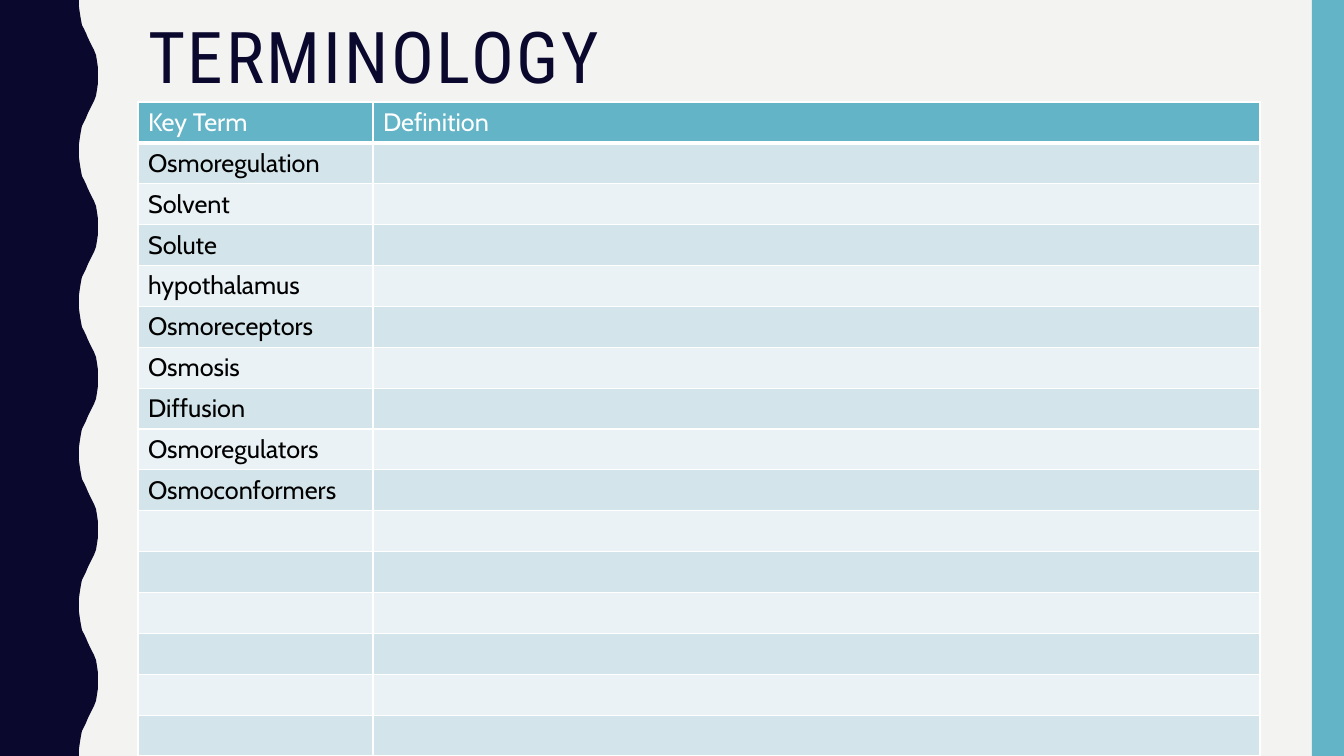
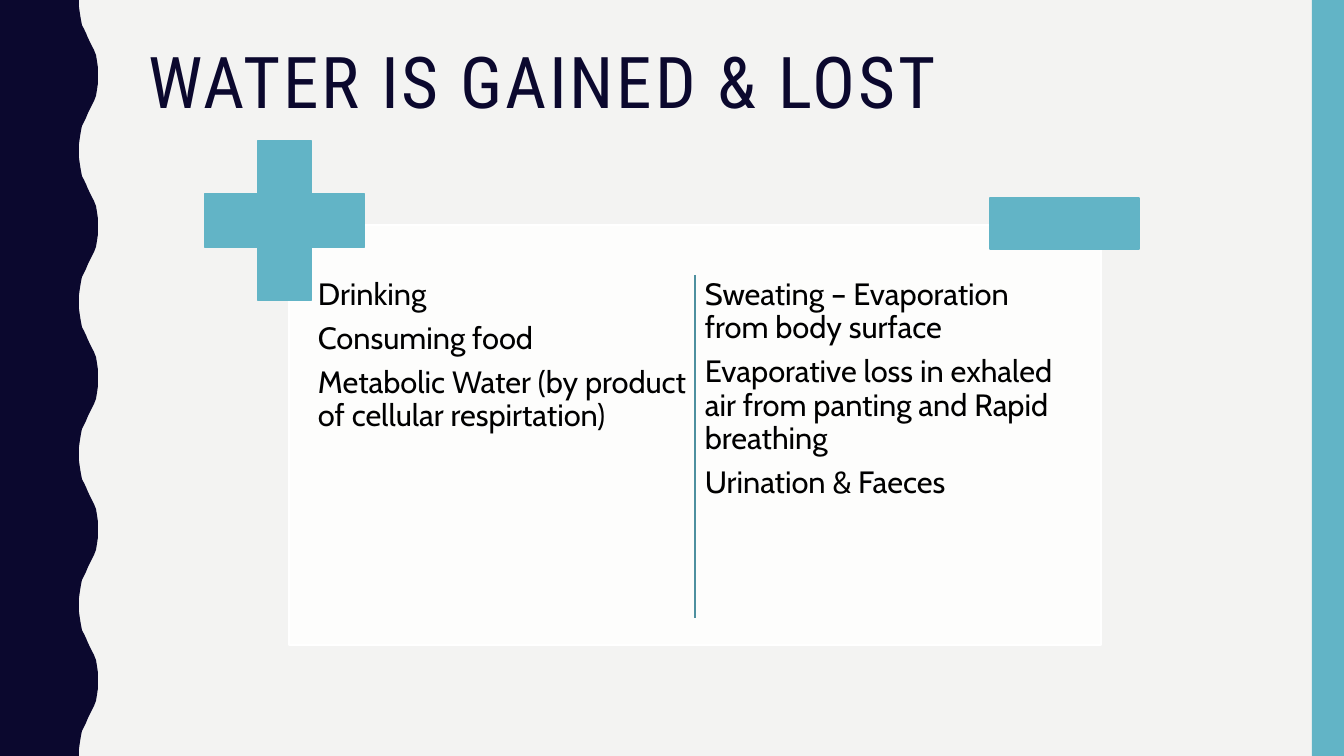
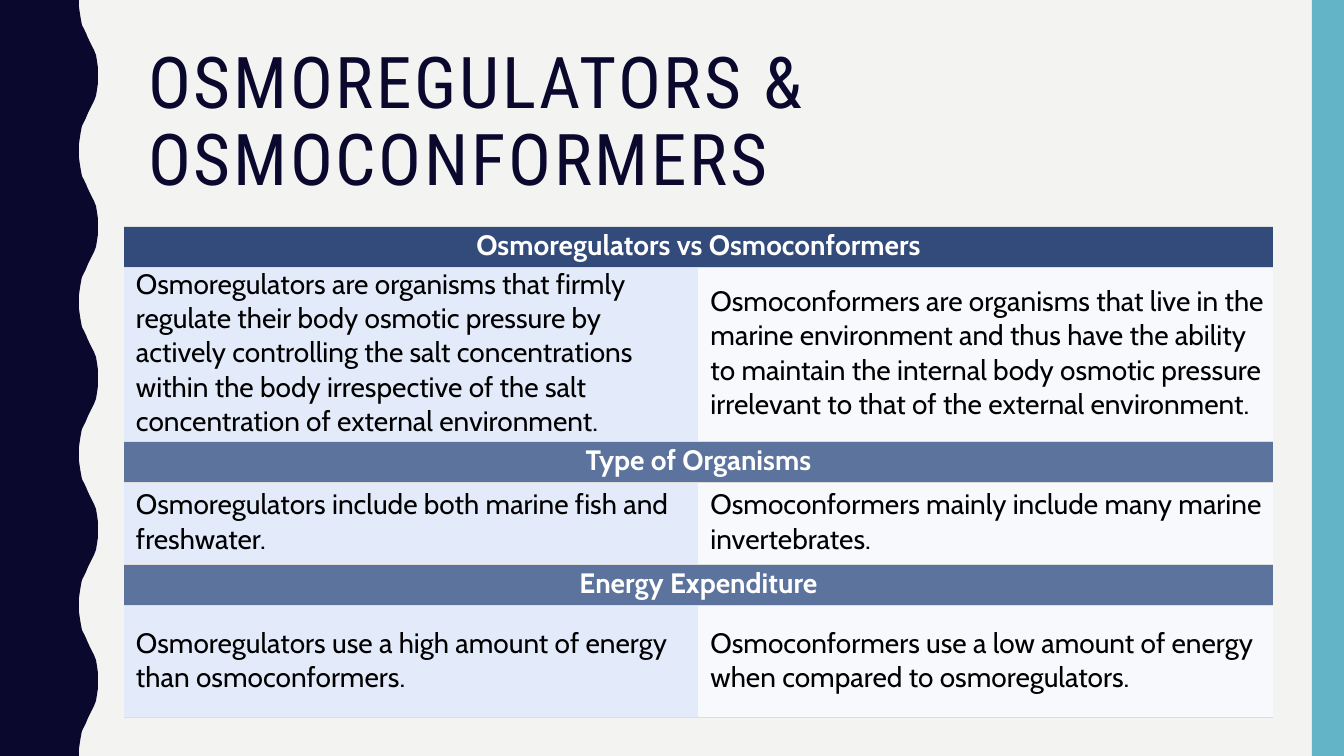
from lxml import etree
from pptx import Presentation
from pptx.dml.color import RGBColor
from pptx.enum.shapes import MSO_CONNECTOR, MSO_SHAPE
from pptx.enum.text import MSO_ANCHOR, MSO_AUTO_SIZE, PP_ALIGN
from pptx.oxml.ns import qn
from pptx.util import Pt

SLIDE_WIDTH, SLIDE_HEIGHT = 1344, 756
EMU_PER_PX = 12192000 / SLIDE_WIDTH
TITLE_ONLY = 5
RECTANGLE, CROSS = MSO_SHAPE.RECTANGLE, MSO_SHAPE.CROSS
STRAIGHT = MSO_CONNECTOR.STRAIGHT
LEFT, CENTER = PP_ALIGN.LEFT, PP_ALIGN.CENTER
TOP, MIDDLE = MSO_ANCHOR.TOP, MSO_ANCHOR.MIDDLE
NO_AUTOFIT = MSO_AUTO_SIZE.NONE
PLAIN_TABLE_STYLE = "{2D5ABB26-0587-4C30-8999-92F81FD0307C}"

TITLE_FONT, BODY_FONT = "Roboto Condensed", "Cabin"
COLORS = {
    "background": "F3F3F2", "navy": "0B082E", "teal": "62B4C6",
    "divider": "4E909F", "panel": "FDFDFC", "white": "FFFFFF", "black": "000000",
    "band_dark": "D3E5EA", "band_light": "EAF2F5",
    "heading": "324B7A", "subheading": "5C739E",
    "regulator": "E3EBFA", "conformer": "F7F9FC", "rule": "DDDDDD",
}

# Half of one wave along the edge of the left band
WAVE_COUNT = 5
HALF_WAVE = [(79, 0), (79, 7), (80, 14), (81, 20), (82, 25), (84, 29), (86, 33),
             (88, 38), (90, 42), (92, 46), (94, 50), (96, 55), (97, 61), (98, 68)]
WAVE_CREST = (98, 76)

TERMS = ["Osmoregulation", "Solvent", "Solute", "hypothalamus", "Osmoreceptors",
         "Osmosis", "Diffusion", "Osmoregulators", "Osmoconformers"]
TERM_ROWS = 16
GAINS = ["Drinking", "Consuming food",
         "Metabolic Water (by product of cellular respirtation)"]
LOSSES = ["Sweating – Evaporation from body surface",
          "Evaporative loss in exhaled air from panting and Rapid breathing",
          "Urination & Faeces"]
# Heading, heading height, the two answers, their height
SECTIONS = [
    ("Osmoregulators vs Osmoconformers", 41,
     "Osmoregulators are organisms that firmly regulate their body osmotic pressure "
     "by actively controlling the salt concentrations within the body irrespective "
     "of the salt concentration of external environment.",
     "Osmoconformers are organisms that live in the marine environment and thus have "
     "the ability to maintain the internal body osmotic pressure irrelevant to that "
     "of the external environment.", 174),
    ("Type of Organisms", 41,
     "Osmoregulators include both marine fish and freshwater.",
     "Osmoconformers mainly include many marine invertebrates.", 82),
    ("Energy Expenditure", 41,
     "Osmoregulators use a high amount of energy than osmoconformers.",
     "Osmoconformers use a low amount of energy when compared to osmoregulators.", 113),
]


def px(length):
    return round(length * EMU_PER_PX)


def emu_box(box):
    return [px(length) for length in box]


def color(name):
    return RGBColor.from_string(COLORS[name])


def format_runs(paragraph, size, color_name, font=BODY_FONT, bold=False):
    for run in paragraph.runs:
        run.font.name, run.font.size, run.font.bold = font, Pt(size), bold
        run.font.color.rgb = color(color_name)


def paint(shape, fill, line=None):
    shape.shadow.inherit = False
    shape.fill.solid()
    shape.fill.fore_color.rgb = color(fill)
    if line:
        shape.line.color.rgb = color(line)
        shape.line.width = Pt(1)
    else:
        shape.line.fill.background()


def add_block(slide, kind, box, fill, line=None):
    shape = slide.shapes.add_shape(kind, *emu_box(box))
    paint(shape, fill, line)
    return shape


# Shared parts

def add_master_bands(slide):
    """Draw the side bands once and hand them to the slide master."""
    master = slide.slide_layout.slide_master
    master.background.fill.solid()
    master.background.fill.fore_color.rgb = color("background")

    period = SLIDE_HEIGHT / WAVE_COUNT
    rising = [(x, period - y) for x, y in reversed(HALF_WAVE)]
    wave = HALF_WAVE + [WAVE_CREST] + rising
    edge = [(x, round(y + index * period)) for index in range(WAVE_COUNT) for x, y in wave]
    builder = slide.shapes.build_freeform(0, 0, scale=EMU_PER_PX)
    builder.add_line_segments(edge + [(0, SLIDE_HEIGHT)], close=True)
    wavy_band = builder.convert_to_shape()
    paint(wavy_band, "navy")
    right_band = add_block(slide, RECTANGLE, (1312, 0, 32, SLIDE_HEIGHT), "teal")
    for position, band in enumerate((wavy_band, right_band), start=2):
        master.shapes.element.insert(position, band.element)


def add_title(slide, text, top, height):
    title = slide.shapes.title
    title.left, title.top, title.width, title.height = emu_box((138, top, 1122, height))
    frame = title.text_frame
    frame.text = text
    frame.word_wrap = True
    frame.auto_size = NO_AUTOFIT
    frame.vertical_anchor = TOP
    paragraph = frame.paragraphs[0]
    paragraph.alignment = LEFT
    paragraph.line_spacing = 0.9
    format_runs(paragraph, 51, "navy", TITLE_FONT)
    for run in paragraph.runs:
        run.font._element.set("spc", "200")


# Tables

def add_plain_table(slide, box, widths, heights):
    frame = slide.shapes.add_table(len(heights), len(widths), *emu_box(box))
    frame.element.xpath(".//a:tableStyleId")[0].text = PLAIN_TABLE_STYLE
    table = frame.table
    for column, width in zip(table.columns, widths):
        column.width = px(width)
    for row, height in zip(table.rows, heights):
        row.height = px(height)
    return table


def style_cell(cell, fill, border_color, borders):
    """Borders map a side (L, R, T, B) to a width in points."""
    properties = cell._tc.get_or_add_tcPr()
    for side, width in borders.items():
        line = etree.SubElement(properties, qn("a:ln" + side), w=str(Pt(width)))
        solid = etree.SubElement(line, qn("a:solidFill"))
        etree.SubElement(solid, qn("a:srgbClr"), val=COLORS[border_color])
    cell.fill.solid()
    cell.fill.fore_color.rgb = color(fill)


def add_term_table(slide, box):
    left, top, width, height = box
    term_width = 235
    table = add_plain_table(slide, box, (term_width, width - term_width),
                            [height / TERM_ROWS] * TERM_ROWS)
    rows = [("Key Term", "Definition")] + [(term, "") for term in TERMS]
    for row_index in range(TERM_ROWS):
        is_header = row_index == 0
        fill = "teal" if is_header else ("band_light", "band_dark")[row_index % 2]
        texts = rows[row_index] if row_index < len(rows) else ("", "")
        for column_index, text in enumerate(texts):
            cell = table.cell(row_index, column_index)
            style_cell(cell, fill, "white", {"L": 1, "R": 1, "T": 1, "B": 3 if is_header else 1})
            if text:
                cell.text_frame.text = text
                format_runs(cell.text_frame.paragraphs[0], 18, "white" if is_header else "black")


def add_section_table(slide, box):
    rows, heights = [], []
    for heading, heading_height, regulator, conformer, answer_height in SECTIONS:
        rows += [(heading, ""), (regulator, conformer)]
        heights += [heading_height, answer_height]
    table = add_plain_table(slide, box, [box[2] / 2] * 2, heights)
    for row_index, texts in enumerate(rows):
        is_heading = row_index % 2 == 0
        if is_heading:
            fills = ["heading" if row_index == 0 else "subheading"] * 2
            table.cell(row_index, 0).merge(table.cell(row_index, 1))
        else:
            fills = ["regulator", "conformer"]
        for column_index, (text, fill) in enumerate(zip(texts, fills)):
            cell = table.cell(row_index, column_index)
            style_cell(cell, fill, "rule", {"T": 0.75, "B": 0.75})
            cell.vertical_anchor = MIDDLE
            cell.margin_left = px(8 if is_heading else 12)
            cell.margin_right, cell.margin_top, cell.margin_bottom = px(8), 0, px(2)
            if text:
                cell.text_frame.text = text
                paragraph = cell.text_frame.paragraphs[0]
                paragraph.alignment = CENTER if is_heading else LEFT
                format_runs(paragraph, 20, "white" if is_heading else "black", bold=is_heading)


# Gains and losses

def add_text_column(slide, box, lines):
    frame = slide.shapes.add_textbox(*emu_box(box)).text_frame
    frame.word_wrap = True
    frame.margin_left = frame.margin_right = frame.margin_top = frame.margin_bottom = px(5)
    frame.text = "\n".join(lines)
    for paragraph in frame.paragraphs:
        paragraph.line_spacing = 0.9
        paragraph.space_after = Pt(7.7)
        format_runs(paragraph, 22, "black")


def add_plus_minus_panel(slide, box):
    left, top, width, height = box
    add_block(slide, RECTANGLE, box, "panel", "white")
    for offset, lines in ((24, GAINS), (411, LOSSES)):
        add_text_column(slide, (left + offset, top + 49, 379, 359), lines)
    plus = add_block(slide, CROSS, (left - 84, top - 84, 159, 159), "teal", "teal")
    plus.adjustments[0] = 0.33
    add_block(slide, RECTANGLE, (left + 701, top - 27, 149, 51), "teal", "teal")
    middle = left + width / 2
    divider = slide.shapes.add_connector(
        STRAIGHT, *emu_box((middle, top + 50, middle, top + 393)))
    divider.line.color.rgb = color("divider")
    divider.line.width = Pt(1)
    etree.SubElement(divider.element.spPr, qn("a:effectLst"))


def main():
    presentation = Presentation()
    presentation.slide_width, presentation.slide_height = px(SLIDE_WIDTH), px(SLIDE_HEIGHT)
    layout = presentation.slide_layouts[TITLE_ONLY]
    # Title, its top and height, the body region and its box
    slides = [
        ("TERMINOLOGY", 17, 164, add_term_table, (138, 102, 1122, 654)),
        ("WATER IS GAINED & LOST", 42, 95, add_plus_minus_panel, (289, 225, 812, 420)),
        ("OSMOREGULATORS & OSMOCONFORMERS", 42, 164, add_section_table, (124, 226, 1149, 492)),
    ]
    for index, (title, top, height, add_body, box) in enumerate(slides):
        slide = presentation.slides.add_slide(layout)
        if index == 0:
            add_master_bands(slide)
        add_title(slide, title, top, height)
        add_body(slide, box)
    presentation.save("out.pptx")


if __name__ == "__main__":
    main()
